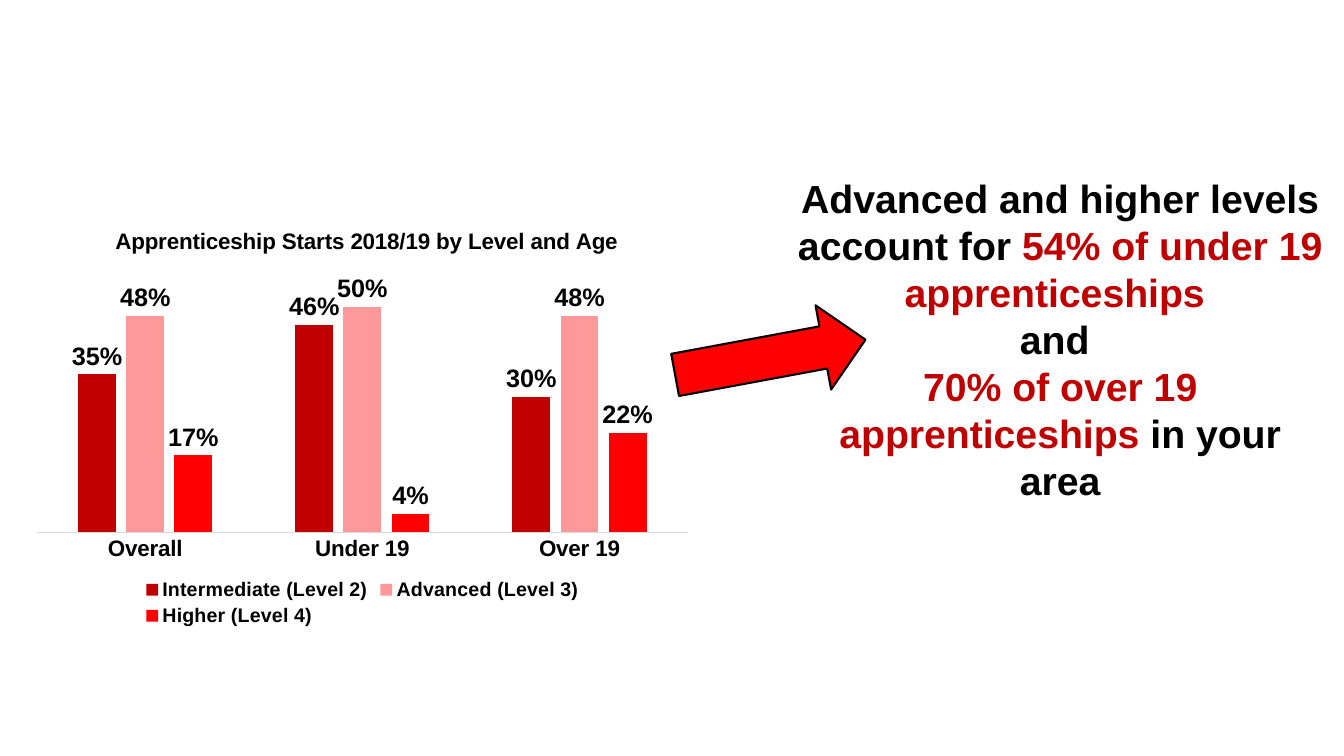
from typing import NamedTuple

from lxml import etree
from pptx import Presentation
from pptx import util as u
from pptx.chart.data import CategoryChartData
from pptx.dml.color import RGBColor
from pptx.enum import chart as ch, shapes, text
from pptx.oxml import parse_xml
from pptx.oxml.ns import nsdecls

EMU_PER_PX = 9144
FONT = "Arial"
BLACK = RGBColor(0x00, 0x00, 0x00)
DARK_RED = RGBColor(0xC0, 0x00, 0x00)
PINK = RGBColor(0xFF, 0x99, 0x99)
RED = RGBColor(0xFF, 0x00, 0x00)
AXIS_GREY = RGBColor(0xD9, 0xD9, 0xD9)


class Level(NamedTuple):
    name: str
    shares: tuple[float, ...]
    color: RGBColor


class Span(NamedTuple):
    words: str
    color: RGBColor = BLACK


AGES = ("Overall", "Under 19", "Over 19")
LEVELS = (
    Level("Intermediate (Level 2)", (0.35, 0.46, 0.30), DARK_RED),
    Level("Advanced (Level 3)", (0.48, 0.50, 0.48), PINK),
    Level("Higher (Level 4)", (0.17, 0.04, 0.22), RED),
)
MESSAGE = (
    (Span("Advanced and higher levels account for "),
     Span("54% of under 19 apprenticeships ", DARK_RED)),
    (Span("and "),),
    (Span("70% of over 19 apprenticeships", DARK_RED), Span(" in your area")),
)


def px(*lengths: int) -> list[u.Emu]:
    return [u.Emu(length * EMU_PER_PX) for length in lengths]


def style(font, size: int, color: RGBColor = BLACK) -> None:
    font.name, font.size, font.bold = FONT, u.Pt(size), True
    font.color.rgb = color


def add_span(para, words: str, *, size: int, color: RGBColor = BLACK) -> None:
    span = para.add_run()
    span.text = words
    style(span.font, size, color)


def layout_xml(**settings: str | float) -> etree._Element:
    """Manual chart layout, in fractions of the chart's size."""
    parts = "".join(f'<c:{key} val="{value}"/>' for key, value in settings.items())
    return parse_xml(f'<c:layout {nsdecls("c")}><c:manualLayout>{parts}'
                     "</c:manualLayout></c:layout>")


def place(element, layout: etree._Element, after: str | None = None) -> None:
    """Replace the element's layout, setting it first or after the named child."""
    for old in element.findall(layout.tag):
        element.remove(old)
    previous = element.find(layout.tag.replace("layout", after)) if after else None
    if previous is None:
        element.insert(0, layout)
    else:
        previous.addnext(layout)


def add_starts_chart(page) -> None:
    data = CategoryChartData(number_format="0%")
    data.categories = AGES
    for level in LEVELS:
        data.add_series(level.name, level.shares)
    chart = page.shapes.add_chart(
        ch.XL_CHART_TYPE.COLUMN_CLUSTERED, *px(23, 200, 673, 426), data).chart
    style(chart.font, 16)

    chart.has_title = True
    add_span(chart.chart_title.text_frame.paragraphs[0],
             "Apprenticeship Starts 2018/19 by Level and Age", size=16)
    chart.chart_title.include_in_layout = False
    place(chart.chart_title._element,
          layout_xml(xMode="edge", yMode="edge", x=0.13, y=0.05), after="tx")

    chart.has_legend = True
    chart.legend.position = ch.XL_LEGEND_POSITION.BOTTOM
    chart.legend.include_in_layout = False
    style(chart.legend.font, 14)

    ages = chart.category_axis
    ages.major_tick_mark = ch.XL_TICK_MARK.NONE
    ages.format.line.color.rgb = AXIS_GREY
    ages.format.line.width = u.Pt(0.75)
    style(ages.tick_labels.font, 16)
    shares = chart.value_axis
    shares.visible = False
    shares.has_major_gridlines = False
    shares.minimum_scale, shares.maximum_scale = 0, 0.6

    plot = chart.plots[0]
    plot.gap_width, plot.overlap = 219, -27
    plot.vary_by_categories = False
    place(plot._element.getparent(), layout_xml(
        layoutTarget="inner", xMode="edge", yMode="edge",
        x=0.02, y=0.14, w=0.96, h=0.63))
    for series, level in zip(plot.series, LEVELS):
        series.format.fill.solid()
        series.format.fill.fore_color.rgb = level.color
        labels = series.data_labels
        labels.show_value = True
        labels.position = ch.XL_LABEL_POSITION.OUTSIDE_END
        labels.number_format, labels.number_format_is_linked = "0%", False
        style(labels.font, 18)


def add_arrow(page) -> None:
    arrow = page.shapes.add_shape(
        shapes.MSO_SHAPE.RIGHT_ARROW, *px(668, 312, 192, 85))
    arrow.rotation = 349.5
    arrow.shadow.inherit = False
    arrow.fill.solid()
    arrow.fill.fore_color.rgb = RED
    arrow.line.color.rgb = BLACK
    arrow.line.width = u.Pt(1.5)


def add_message(page) -> None:
    frame = page.shapes.add_textbox(*px(780, 168, 543, 340)).text_frame
    frame.word_wrap = True
    frame.auto_size = text.MSO_AUTO_SIZE.SHAPE_TO_FIT_TEXT
    for index, spans in enumerate(MESSAGE):
        para = frame.add_paragraph() if index else frame.paragraphs[0]
        para.alignment = text.PP_ALIGN.CENTER
        for span in spans:
            add_span(para, span.words, size=28, color=span.color)


def main() -> None:
    deck = Presentation()
    deck.slide_width, deck.slide_height = px(1333, 750)
    page = deck.slides.add_slide(deck.slide_layouts[6])
    add_message(page)
    add_arrow(page)
    add_starts_chart(page)
    deck.save("out.pptx")


if __name__ == "__main__":
    main()
